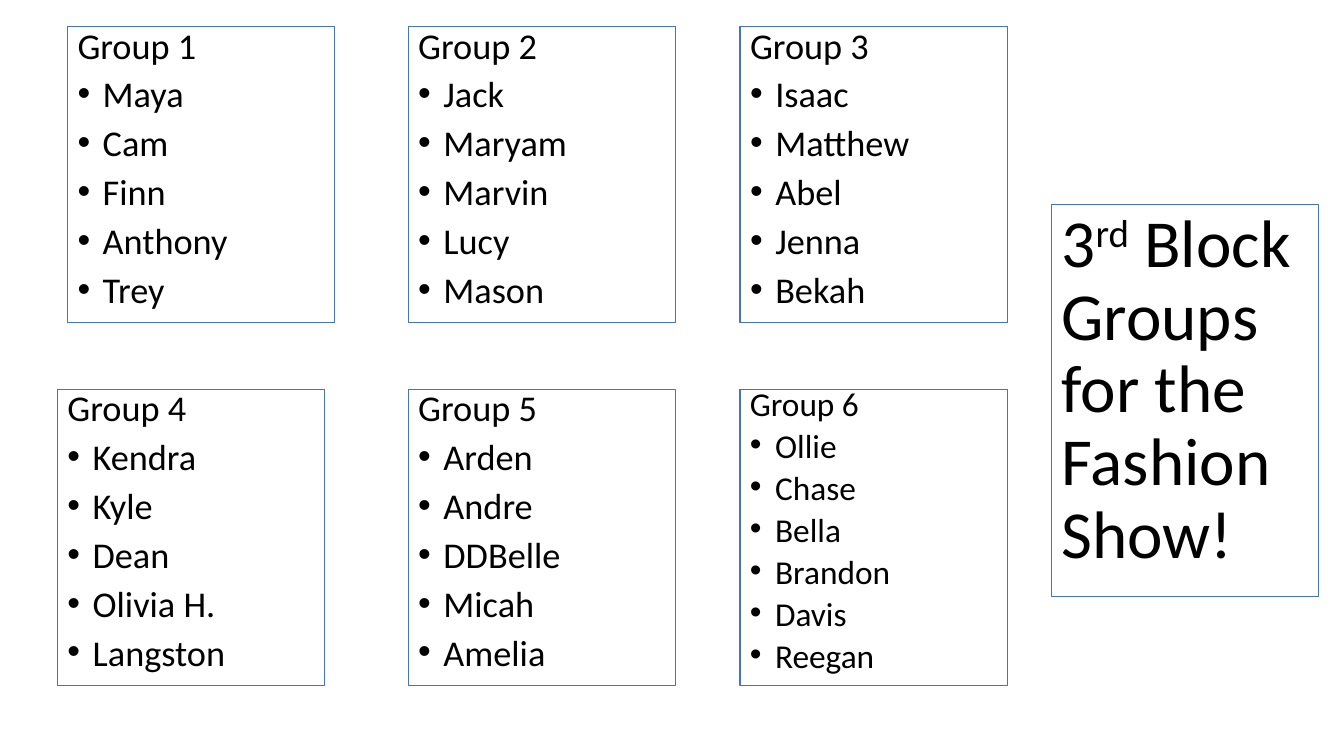
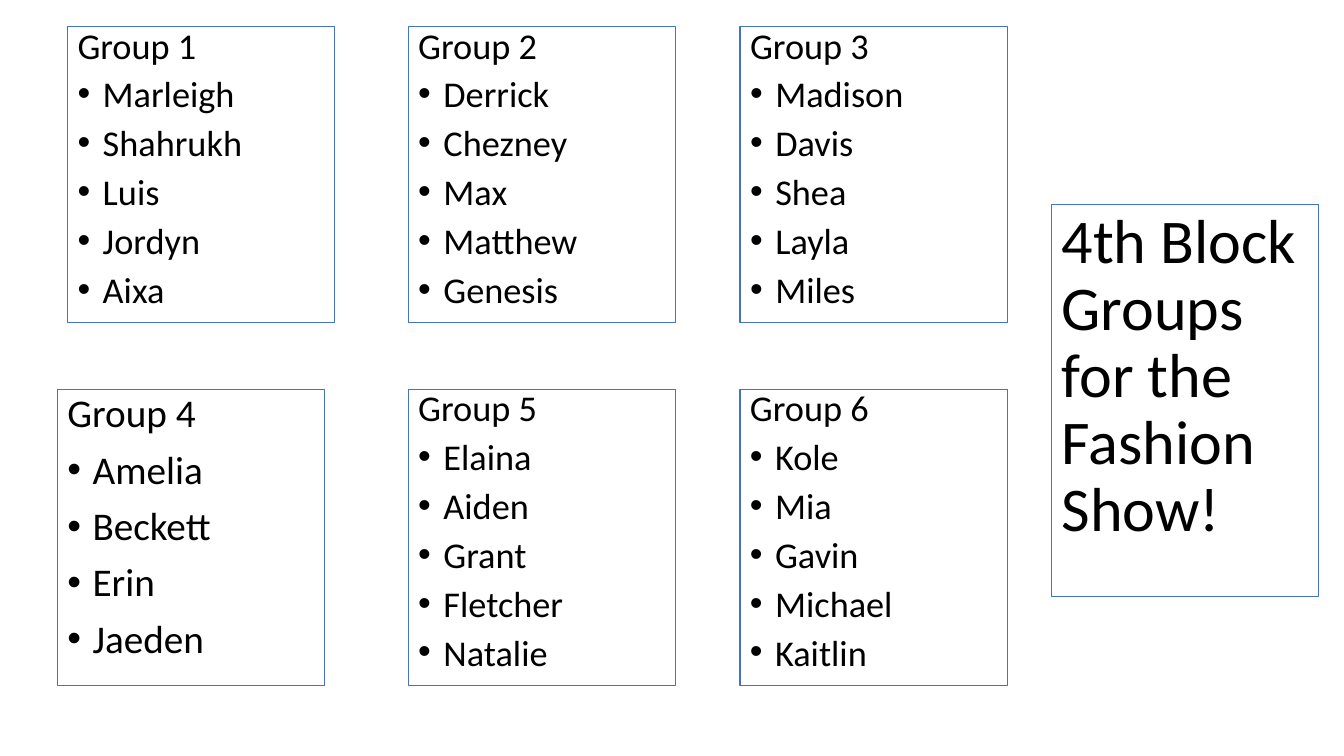
from dataclasses import dataclass

from lxml.etree import SubElement
from pptx import Presentation
from pptx.dml.color import RGBColor
from pptx.enum.text import MSO_ANCHOR, MSO_AUTO_SIZE, PP_ALIGN
from pptx.oxml.ns import qn
from pptx.util import Inches, Pt

SLIDE_WIDTH, SLIDE_HEIGHT = Inches(13.33), Inches(7.5)
INK, OUTLINE = "000000", "4472C4"
FONT = "Calibri"
BULLET_INDENT = Inches(0.25)

# Lengths in percent of the slide's width or height
COLUMNS = (5.03, 30.38, 55.06)
ROWS = (3.47, 51.47)
CARD_WIDTH, CARD_HEIGHT = 19.88, 39.2
GROUP_4_SHIFT = -0.75
PLACEHOLDER_GROUP = 3

FRAME_FORMAT = {
    "word_wrap": True,
    "auto_size": MSO_AUTO_SIZE.NONE,
    "vertical_anchor": MSO_ANCHOR.TOP,
    "margin_left": Inches(0.1),
    "margin_right": Inches(0.1),
    "margin_top": Inches(0.05),
    "margin_bottom": Inches(0.05),
}


@dataclass(frozen=True)
class Area:
    left: float
    top: float
    width: float
    height: float

    def emu(self) -> dict[str, int]:
        return {
            "left": round(SLIDE_WIDTH * self.left / 100),
            "top": round(SLIDE_HEIGHT * self.top / 100),
            "width": round(SLIDE_WIDTH * self.width / 100),
            "height": round(SLIDE_HEIGHT * self.height / 100),
        }


@dataclass(frozen=True)
class Block:
    number: str
    ordinal: str
    raised: bool
    heading_size: float
    groups: tuple[tuple[str, ...], ...]


HEADING_AREA = Area(78.24, 27.07, CARD_WIDTH, 51.87)

BLOCKS = (
    Block("3", "rd", True, 48, (
        ("Maya", "Cam", "Finn", "Anthony", "Trey"),
        ("Jack", "Maryam", "Marvin", "Lucy", "Mason"),
        ("Isaac", "Matthew", "Abel", "Jenna", "Bekah"),
        ("Kendra", "Kyle", "Dean", "Olivia H.", "Langston"),
        ("Arden", "Andre", "DDBelle", "Micah", "Amelia"),
        ("Ollie", "Chase", "Bella", "Brandon", "Davis", "Reegan"),
    )),
    Block("4", "th", False, 44.4, (
        ("Marleigh", "Shahrukh", "Luis", "Jordyn", "Aixa"),
        ("Derrick", "Chezney", "Max", "Matthew", "Genesis"),
        ("Madison", "Davis", "Shea", "Layla", "Miles"),
        ("Amelia", "Beckett", "Erin", "Jaeden"),
        ("Elaina", "Aiden", "Grant", "Fletcher", "Natalie"),
        ("Kole", "Mia", "Gavin", "Michael", "Kaitlin"),
    )),
)


def color(value: str) -> RGBColor:
    return RGBColor.from_string(value)


def frame_card(card, area: Area) -> None:
    """Place and outline a card and set up its text frame."""
    for name, value in area.emu().items():
        setattr(card, name, value)
    card.line.color.rgb = color(OUTLINE)
    card.line.width = Pt(0.75)
    for name, value in FRAME_FORMAT.items():
        setattr(card.text_frame, name, value)


def add_run(paragraph, text: str, size: float, raised: bool = False) -> None:
    run = paragraph.add_run()
    run.text = text
    for name, value in {"name": FONT, "size": Pt(size), "bold": False}.items():
        setattr(run.font, name, value)
    run.font.color.rgb = color(INK)
    if raised:
        run._r.get_or_add_rPr().set("baseline", "30000")


def format_paragraph(paragraph, spacing: float, bulleted: bool = False) -> None:
    layout = {
        "alignment": PP_ALIGN.LEFT,
        "line_spacing": spacing,
        "space_before": Pt(10),
        "space_after": Pt(0),
    }
    for name, value in layout.items():
        setattr(paragraph, name, value)
    properties = paragraph._p.get_or_add_pPr()
    indent = BULLET_INDENT if bulleted else 0
    properties.set("marL", str(indent))
    properties.set("indent", str(-indent))
    if bulleted:
        SubElement(properties, qn("a:buFont")).set("typeface", "Arial")
        SubElement(properties, qn("a:buChar")).set("char", "•")
    else:
        SubElement(properties, qn("a:buNone"))


def group_area(number: int) -> Area:
    row, column = divmod(number - 1, len(COLUMNS))
    shift = GROUP_4_SHIFT if number == 4 else 0
    return Area(COLUMNS[column] + shift, ROWS[row], CARD_WIDTH, CARD_HEIGHT)


def fill_group(card, number: int, members: tuple[str, ...]) -> None:
    """Write a group; text shrinks with each member beyond four."""
    frame_card(card, group_area(number))
    extra = len(members) - 4
    size, spacing = 28 - 2.1 * extra, round(0.9 - 0.1 * extra, 2)
    for index, text in enumerate((f"Group {number}", *members)):
        frame = card.text_frame
        paragraph = frame.add_paragraph() if index else frame.paragraphs[0]
        format_paragraph(paragraph, spacing, bulleted=index > 0)
        add_run(paragraph, text, size)


def fill_heading(title, block: Block) -> None:
    frame_card(title, HEADING_AREA)
    paragraph = title.text_frame.paragraphs[0]
    format_paragraph(paragraph, 0.9)
    add_run(paragraph, block.number, block.heading_size)
    add_run(paragraph, block.ordinal, block.heading_size, block.raised)
    add_run(paragraph, " Block Groups for the Fashion Show!", block.heading_size)


def add_block(deck, block: Block) -> None:
    slide = deck.slides.add_slide(deck.slide_layouts[1])
    fill_heading(slide.shapes.title, block)
    for number, members in enumerate(block.groups, start=1):
        if number == PLACEHOLDER_GROUP:
            card = slide.placeholders[1]
        else:
            card = slide.shapes.add_textbox(**group_area(number).emu())
        fill_group(card, number, members)


def main() -> None:
    deck = Presentation()
    deck.slide_width, deck.slide_height = SLIDE_WIDTH, SLIDE_HEIGHT
    for block in BLOCKS:
        add_block(deck, block)
    deck.save("out.pptx")


if __name__ == "__main__":
    main()
